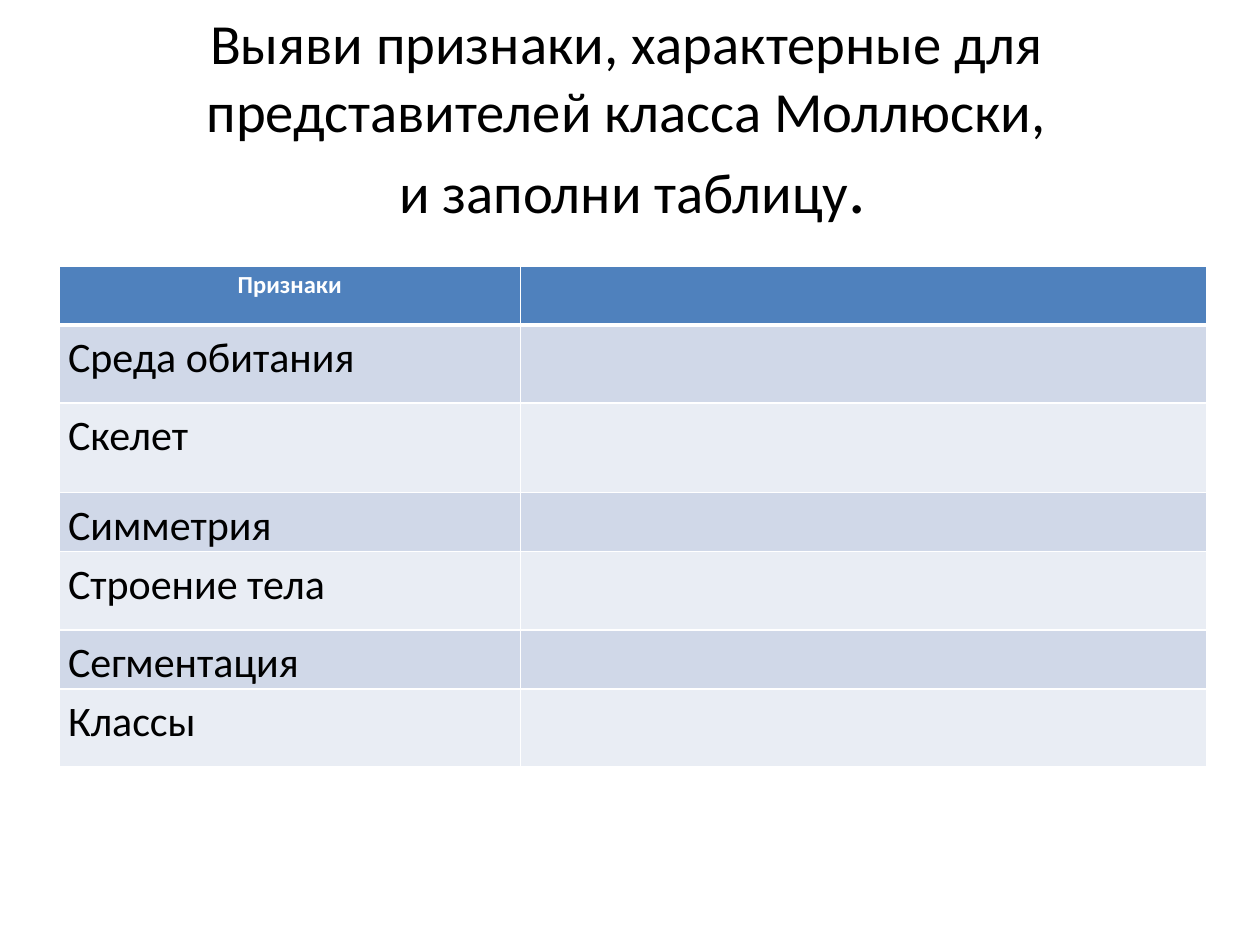
from lxml.etree import SubElement
from pptx import Presentation
from pptx.dml.color import RGBColor as RGB
from pptx.enum.text import MSO_ANCHOR as Anchor, PP_ALIGN as Align
from pptx.oxml.ns import qn
from pptx.util import Inches, Pt

# Content
TITLE = ["Выяви признаки, характерные для представителей класса Моллюски,",
         " и заполни таблицу"]
STOP = "."
ROWS = [("Признаки", 0.47), ("Среда обитания", 0.62), ("Скелет", 0.71),
        ("Симметрия", 0.47), ("Строение тела", 0.62),
        ("Сегментация", 0.47), ("Классы", 0.62)]
COLS = [3.66, 5.45]

THEME = {
    "font": "Calibri", "ink": "000000", "white": "FFFFFF",
    "head": "4F81BD", "bands": ["E9EDF4", "D0D8E8"],
    "title": 32.4, "stop": 39.6, "label": 14, "body": 24,
}


def style(font, size, color, bold=False):
    look = {"name": THEME["font"], "size": Pt(size), "bold": bold}
    for key, value in look.items():
        setattr(font, key, value)
    font.color.rgb = RGB.from_string(color)


def edge(cell, widths):
    """Draw white cell borders; they must come before the fill."""
    props = cell._tc.get_or_add_tcPr()
    for side, width in widths.items():
        line = SubElement(props, qn("a:ln" + side), w=str(Pt(width)))
        fill = SubElement(line, qn("a:solidFill"))
        SubElement(fill, qn("a:srgbClr"), val=THEME["white"])


deck = Presentation()
deck.slide_width, deck.slide_height = Inches(10), Inches(7.5)
slide = deck.slides.add_slide(deck.slide_layouts[5])

# Title
title = slide.shapes.title
place = {"left": 0.47, "top": 0.31, "width": 9, "height": 1.25}
for key, value in place.items():
    setattr(title, key, Inches(value))
title.text_frame.vertical_anchor = Anchor.MIDDLE
para = title.text_frame.paragraphs[0]
para.alignment = Align.CENTER
for i, line in enumerate(TITLE):
    if i:
        para.add_line_break()
    run = para.add_run()
    run.text = line
    style(run.font, THEME["title"], THEME["ink"])
run = para.add_run()
run.text = STOP
style(run.font, THEME["stop"], THEME["ink"])

# Table
high = sum(height for _, height in ROWS)
grid = slide.shapes.add_table(
    len(ROWS), len(COLS), Inches(0.47), Inches(2.11),
    Inches(sum(COLS)), Inches(high)).table
for col, width in zip(grid.columns, COLS):
    col.width = Inches(width)

PAD = {"margin_left": 0.07, "margin_right": 0.07,
       "margin_top": 0, "margin_bottom": 0}
for r, (label, height) in enumerate(ROWS):
    grid.rows[r].height = Inches(height)
    head = r == 0
    back = THEME["head"] if head else THEME["bands"][r % 2]
    for cell in grid.rows[r].cells:
        for key, value in PAD.items():
            setattr(cell, key, Inches(value))
        edge(cell, {"L": 1, "R": 1, "T": 3 if r == 1 else 1,
                    "B": 3 if head else 1})
        cell.fill.solid()
        cell.fill.fore_color.rgb = RGB.from_string(back)

    # Row label
    para = grid.cell(r, 0).text_frame.paragraphs[0]
    para.line_spacing = 1.15
    run = para.add_run()
    run.text = label
    if head:
        para.alignment = Align.CENTER
        style(run.font, THEME["label"], THEME["white"], True)
    else:
        props = para._p.get_or_add_pPr()
        props.set("marL", str(Inches(0.38)))
        props.set("indent", str(Inches(-0.38)))
        style(run.font, THEME["body"], THEME["ink"])

deck.save("out.pptx")
